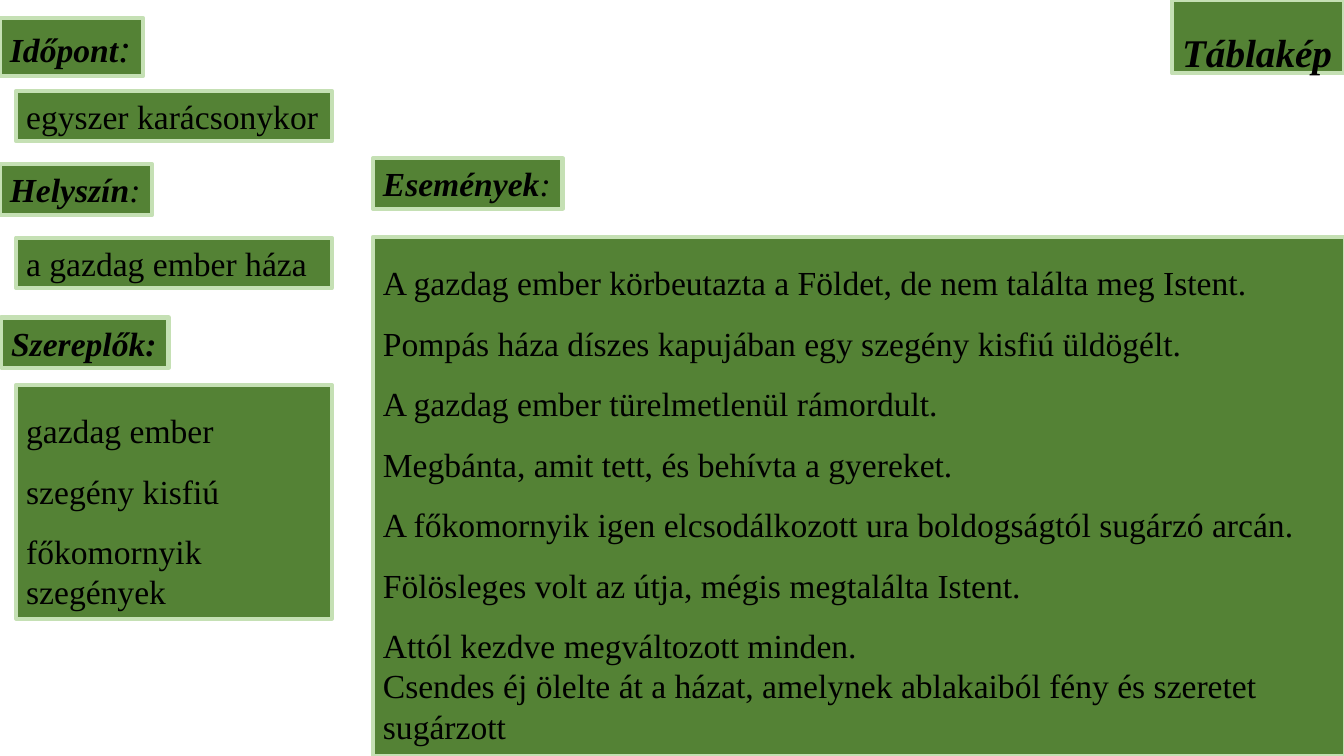
from pptx import Presentation
from pptx.dml.color import RGBColor
from pptx.enum.shapes import MSO_SHAPE
from pptx.enum.text import MSO_ANCHOR, MSO_AUTO_SIZE, PP_ALIGN
from pptx.util import Cm, Pt

RECTANGLE = MSO_SHAPE.RECTANGLE
TOP = MSO_ANCHOR.TOP
GROW = MSO_AUTO_SIZE.SHAPE_TO_FIT_TEXT
LEFT = PP_ALIGN.LEFT

GREEN, PALE_GREEN, BLACK = "548235", "C5E0B4", "000000"
BODY = {"name": "Times New Roman", "size": Pt(24), "bold": False, "italic": False}
COLON = {**BODY, "italic": True}
LARGE_COLON = {**COLON, "size": Pt(28)}
HEADING = {**COLON, "bold": True}
TITLE = {**HEADING, "size": Pt(28)}

LABEL_HEIGHT = 1.27
DETAIL_LEFT, DETAIL_WIDTH = 0.41, 7.95
EVENTS_LEFT = 9.4


def color(value):
    return RGBColor.from_string(value)


def add_box(position, paragraphs, wrap=False):
    shape = slide.shapes.add_shape(RECTANGLE, *[Cm(value) for value in position])
    shape.shadow.inherit = False
    shape.fill.solid()
    shape.fill.fore_color.rgb = color(GREEN)
    shape.line.color.rgb = color(PALE_GREEN)
    shape.line.width = Pt(3)
    frame = shape.text_frame
    for name, value in {"word_wrap": wrap, "auto_size": GROW, "vertical_anchor": TOP}.items():
        setattr(frame, name, value)
    for index, (spacing, runs) in enumerate(paragraphs):
        paragraph = frame.add_paragraph() if index else frame.paragraphs[0]
        paragraph.alignment = LEFT
        paragraph.line_spacing = spacing
        for text, style in runs:
            run = paragraph.add_run()
            run.text = text
            run.font.color.rgb = color(BLACK)
            for name, value in style.items():
                setattr(run.font, name, value)


presentation = Presentation()
presentation.slide_width = Cm(33.87)
presentation.slide_height = Cm(19.05)
slide = presentation.slides.add_slide(presentation.slide_layouts[6])

labels = [
    ((0, 0.46, 3.61, 1.45), 1.0, [("Időpont", HEADING), (":", LARGE_COLON)]),
    ((DETAIL_LEFT, 2.29, DETAIL_WIDTH, LABEL_HEIGHT), 1.0, [("egyszer karácsonykor", BODY)]),
    ((29.54, 0, 4.34, 1.85), 1.5, [("Táblakép", TITLE)]),
    ((0, 4.14, 3.84, LABEL_HEIGHT), 1.0, [("Helyszín", HEADING), (":", COLON)]),
    ((0.03, 8, 4.22, LABEL_HEIGHT), 1.0, [("Szereplők:", HEADING)]),
    ((EVENTS_LEFT, 3.99, 4.78, LABEL_HEIGHT), 1.0, [("Események", HEADING), (":", COLON)]),
]
for position, spacing, runs in labels:
    add_box(position, [(spacing, runs)])

characters = ["gazdag ember", "szegény kisfiú", "főkomornyik", "szegények"]
events = [
    "A gazdag ember körbeutazta a Földet, de nem találta meg Istent.",
    "Pompás háza díszes kapujában egy szegény kisfiú üldögélt.",
    "A gazdag ember türelmetlenül rámordult.",
    "Megbánta, amit tett, és behívta a gyereket.",
    "A főkomornyik igen elcsodálkozott ura boldogságtól sugárzó arcán.",
    "Fölösleges volt az útja, mégis megtalálta Istent.",
    "Attól kezdve megváltozott minden.",
    "Csendes éj ölelte át a házat, amelynek ablakaiból fény és szeretet sugárzott",
]
text_blocks = [
    ((DETAIL_LEFT, 5.99, DETAIL_WIDTH, LABEL_HEIGHT), ["a gazdag ember háza"]),
    ((DETAIL_LEFT, 9.7, DETAIL_WIDTH, 5.89), characters),
    ((EVENTS_LEFT, 5.97, 24.49, 13.08), events),
]
for position, lines in text_blocks:
    spacings = [1.5] * (len(lines) - 1) + [1.0]
    add_box(position, [(spacing, [(line, BODY)]) for spacing, line in zip(spacings, lines)], wrap=True)

presentation.save("out.pptx")
